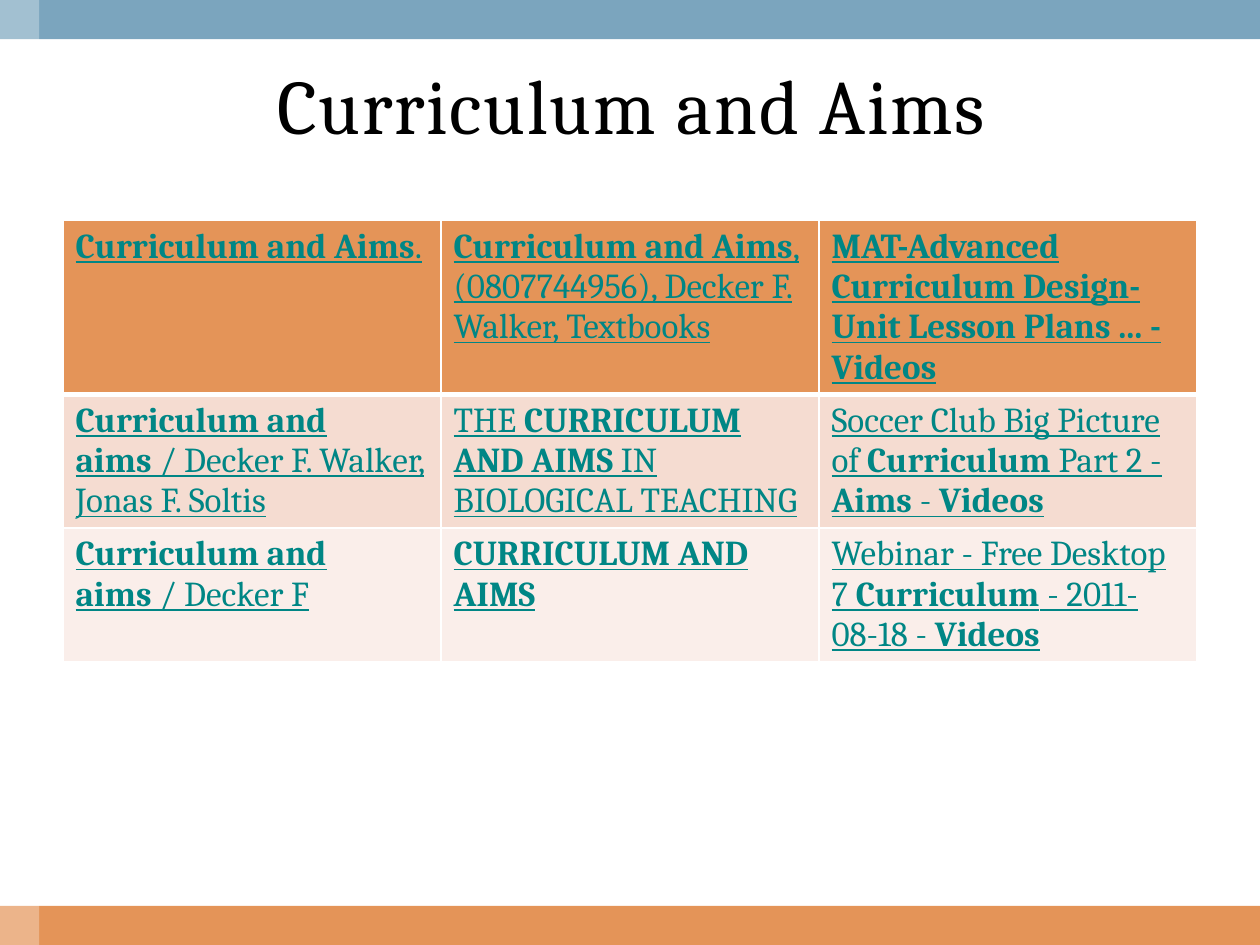
"""Build the Curriculum and Aims slide with its table of linked resources."""
from dataclasses import dataclass

from lxml.etree import SubElement
from pptx import Presentation
from pptx.dml.color import RGBColor
from pptx.enum.shapes import MSO_SHAPE
from pptx.enum.text import MSO_ANCHOR, MSO_AUTO_SIZE, PP_ALIGN
from pptx.oxml.ns import qn
from pptx.util import Pt

WHITE = RGBColor(0xFF, 0xFF, 0xFF)
BLACK = RGBColor(0x00, 0x00, 0x00)
TEAL = RGBColor(0x00, 0x86, 0x85)
BLUE = RGBColor(0x7B, 0xA5, 0xBE)
ORANGE = RGBColor(0xE4, 0x94, 0x58)
PEACH = RGBColor(0xF5, 0xDC, 0xD1)
PALE = RGBColor(0xFA, 0xEE, 0xEA)

W, H, BAND = 720, 540, 22.4
FONT = "Cambria"
LINK = {"name": FONT, "size": Pt(20), "underline": True}
TITLE = {"name": FONT, "size": Pt(44), "bold": False}


@dataclass
class Bar:
    left: float
    top: float
    width: float
    height: float
    color: RGBColor
    alpha: int = 100


@dataclass
class Row:
    height: float
    fill: RGBColor
    top_line: int
    bottom_line: int
    cells: tuple[str, ...]


BARS = (
    Bar(0, H - BAND, W, BAND, ORANGE),
    Bar(0, 0, W, BAND, BLUE),
    Bar(0, 0, BAND, H, WHITE, 30),
)
ROWS = (
    Row(99.2, ORANGE, 1, 3, (
        "*Curriculum and Aims*.",
        "*Curriculum and Aims*, (0807744956), Decker F. Walker, Textbooks",
        "*MAT-Advanced Curriculum Design-Unit Lesson Plans ... - Videos*",
    )),
    Row(76, PEACH, 3, 1, (
        "*Curriculum and aims* / Decker F. Walker, Jonas F. Soltis",
        "THE *CURRICULUM AND AIMS* IN BIOLOGICAL TEACHING",
        "Soccer Club Big Picture of *Curriculum* Part 2 - *Aims* - *Videos*",
    )),
    Row(76, PALE, 1, 1, (
        "*Curriculum and aims* / Decker F",
        "*CURRICULUM AND AIMS*",
        "Webinar - Free Desktop 7 *Curriculum* - 2011-08-18 - *Videos*",
    )),
)


def style(font, color: RGBColor, fmt: dict) -> None:
    for key, value in fmt.items():
        setattr(font, key, value)
    font.color.rgb = color


def add_bar(s, bar: Bar) -> None:
    sp = s.shapes.add_shape(MSO_SHAPE.RECTANGLE, Pt(bar.left), Pt(bar.top),
                            Pt(bar.width), Pt(bar.height))
    sp.shadow.inherit = False
    sp.fill.solid()
    sp.fill.fore_color.rgb = bar.color
    sp.line.fill.background()
    if bar.alpha < 100:
        clr = sp.fill._xPr.find(f".//{qn('a:srgbClr')}")
        SubElement(clr, qn("a:alpha"), val=str(bar.alpha * 1000))


def add_title(s, text: str) -> None:
    sp = s.shapes.title
    box = {"left": 24, "top": 22.4, "width": 674, "height": 74}
    for key, value in box.items():
        setattr(sp, key, Pt(value))
    tf = sp.text_frame
    tf.auto_size = MSO_AUTO_SIZE.NONE
    tf.vertical_anchor = MSO_ANCHOR.MIDDLE
    p = tf.paragraphs[0]
    p.alignment = PP_ALIGN.CENTER
    r = p.add_run()
    r.text = text
    style(r.font, BLACK, TITLE)
    r.font._element.set("spc", "100")


def fill_cell(cell, row: Row, text: str) -> None:
    tc_pr = cell._tc.get_or_add_tcPr()
    borders = {"lnL": 1, "lnR": 1, "lnT": row.top_line, "lnB": row.bottom_line}
    for tag, width in borders.items():
        ln = SubElement(tc_pr, qn(f"a:{tag}"), w=str(Pt(width)))
        fill = SubElement(ln, qn("a:solidFill"))
        SubElement(fill, qn("a:srgbClr"), val=str(WHITE))
    cell.fill.solid()
    cell.fill.fore_color.rgb = row.fill
    p = cell.text_frame.paragraphs[0]
    for i, part in enumerate(text.split("*")):
        if part:
            r = p.add_run()
            r.text = part
            style(r.font, TEAL, LINK | {"bold": i % 2 == 1})


def add_resources(s, rows: tuple[Row, ...]) -> None:
    cols = len(rows[0].cells)
    height = sum(row.height for row in rows)
    table = s.shapes.add_table(len(rows), cols, Pt(36), Pt(126),
                               Pt(216 * cols), Pt(height)).table
    for i, row in enumerate(rows):
        table.rows[i].height = Pt(row.height)
        for j, text in enumerate(row.cells):
            fill_cell(table.cell(i, j), row, text)


def main() -> None:
    prs = Presentation()
    prs.slide_width, prs.slide_height = Pt(W), Pt(H)
    s = prs.slides.add_slide(prs.slide_layouts[5])
    for bar in BARS:
        add_bar(s, bar)
    add_resources(s, ROWS)
    add_title(s, "Curriculum and Aims")
    prs.save("out.pptx")


if __name__ == "__main__":
    main()
